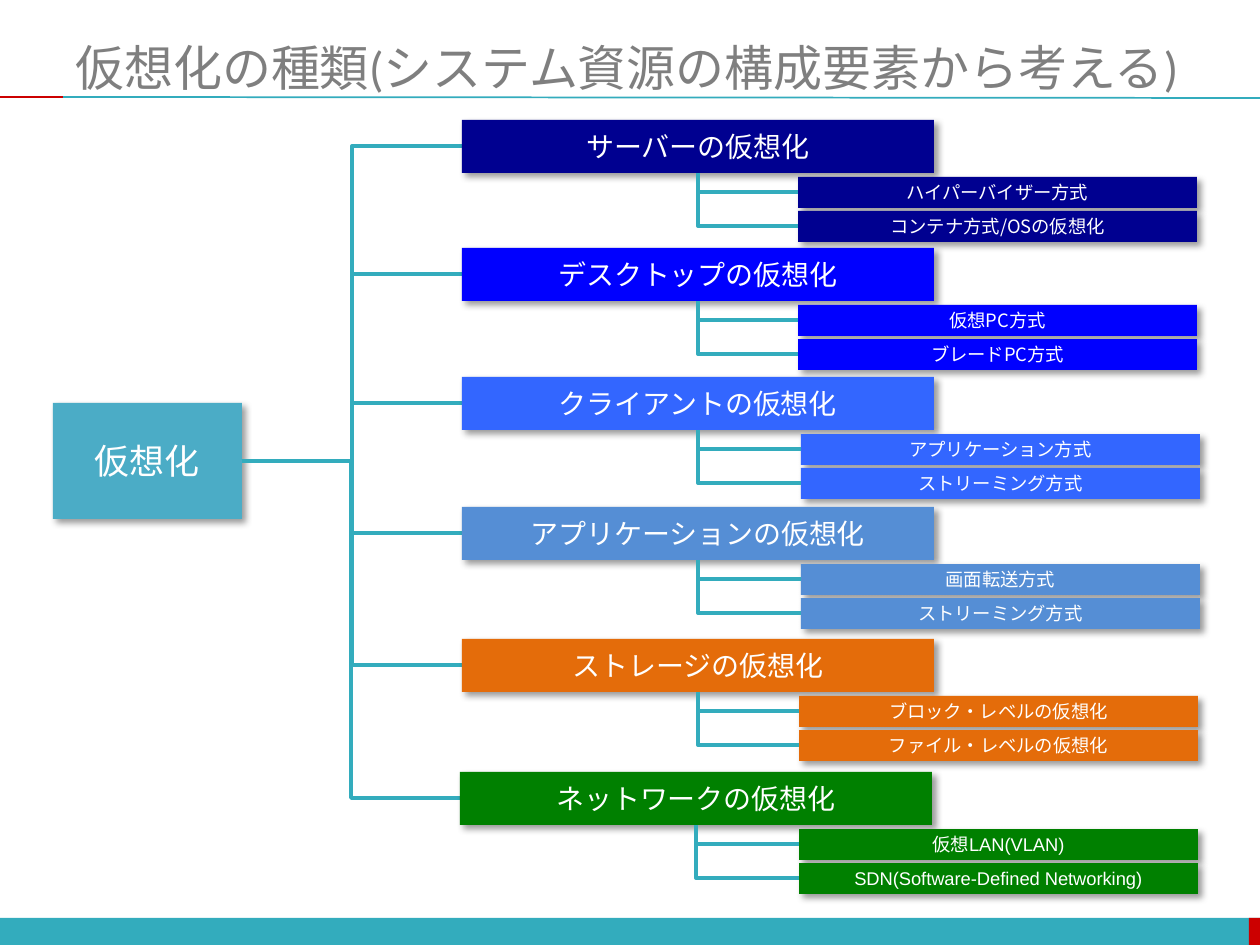
from typing import NamedTuple

from lxml import etree
from pptx import Presentation
from pptx import util as u
from pptx.dml.color import RGBColor
from pptx.enum import shapes, text
from pptx.oxml import parse_xml
from pptx.oxml.ns import nsdecls, qn

SCALE = 914400 / 126
JP = "Noto Sans CJK JP"
COLORS = {
    "teal": "33ACBD", "red": "CC0000", "grey": "7F7F7F", "white": "FFFFFF",
    "root": "4BACC6", "server": "000090", "desktop": "0000FF",
    "client": "3366FF", "app": "558ED5", "storage": "E46C0A",
    "network": "008000",
}
SHADOW = (
    f'<a:effectLst {nsdecls("a")}>'
    '<a:outerShdw blurRad="50800" dist="38100" dir="2700000" algn="tl" rotWithShape="0">'
    '<a:srgbClr val="000000"><a:alpha val="40000"/></a:srgbClr>'
    '</a:outerShdw></a:effectLst>'
)


class Box(NamedTuple):
    x: int
    y: int
    w: int
    h: int

    @property
    def mid(self) -> int:
        return self.y + self.h // 2


class Group(NamedTuple):
    title: str
    color: str
    left: int
    top: int
    kid_x: int
    kids: tuple[str, str]
    font: str = JP


GROUPS = [
    Group("サーバーの仮想化", "server", 462, 120, 798,
          ("ハイパーバイザー方式", "コンテナ方式/OSの仮想化")),
    Group("デスクトップの仮想化", "desktop", 462, 248, 798,
          ("仮想PC方式", "ブレードPC方式")),
    Group("クライアントの仮想化", "client", 462, 377, 801,
          ("アプリケーション方式", "ストリーミング方式")),
    Group("アプリケーションの仮想化", "app", 462, 507, 801,
          ("画面転送方式", "ストリーミング方式")),
    Group("ストレージの仮想化", "storage", 462, 639, 799,
          ("ブロック・レベルの仮想化", "ファイル・レベルの仮想化")),
    Group("ネットワークの仮想化", "network", 460, 772, 799,
          ("仮想LAN(VLAN)", "SDN(Software-Defined Networking)"), "Arial"),
]


def px(n: float) -> u.Emu:
    return u.Emu(round(n * SCALE))


def rgb(name: str) -> RGBColor:
    return RGBColor.from_string(COLORS[name])


def write(shape, words: str, size: float, color: str, font: str, align) -> None:
    frame = shape.text_frame
    frame.text = words
    frame.word_wrap = True
    frame.vertical_anchor = text.MSO_ANCHOR.MIDDLE
    frame.margin_top = frame.margin_bottom = 0
    para = frame.paragraphs[0]
    para.alignment = align
    for run in para.runs:
        run.font.size = u.Pt(size)
        run.font.name = font
        run.font.color.rgb = rgb(color)
        east = etree.SubElement(run.font._element, qn("a:ea"))
        east.set("typeface", JP)


def block(slide, box: Box, color: str):
    shape = slide.shapes.add_shape(
        shapes.MSO_SHAPE.RECTANGLE, *(px(n) for n in box))
    shape.shadow.inherit = False
    shape.fill.solid()
    shape.fill.fore_color.rgb = rgb(color)
    shape.line.fill.background()
    return shape


def node(slide, box: Box, words: str, color: str, size: float, font: str = JP) -> None:
    """Draw a labelled block with a soft shadow."""
    shape = block(slide, box, color)
    props = shape._element.spPr
    props.replace(props.find(qn("a:effectLst")), parse_xml(SHADOW))
    write(shape, words, size, "white", font, text.PP_ALIGN.CENTER)


def link(slide, kind, ends: tuple, color: str = "teal", width: float = 2):
    line = slide.shapes.add_connector(kind, *(px(n) for n in ends))
    line.line.color.rgb = rgb(color)
    line.line.width = u.Pt(width)
    etree.SubElement(line._element.spPr, qn("a:effectLst"))
    return line


def drop(slide, x1: int, y1: int, x2: int, y2: int) -> None:
    """Draw a one-bend link that goes down, then right."""
    midx, midy = (x1 + x2) / 2, (y1 + y2) / 2
    dx, dy = (x2 - x1) / 2, (y2 - y1) / 2
    ends = (midx + dy, midy - dx, midx - dy, midy + dx)
    line = link(slide, shapes.MSO_CONNECTOR.ELBOW, ends)
    props = line._element.spPr
    props.find(qn("a:prstGeom")).set("prst", "bentConnector2")
    props.find(qn("a:xfrm")).set("rot", str(270 * 60000))


def branch(slide, root: Box, group: Group) -> None:
    """Draw a group, its two methods and all their links."""
    head = Box(group.left, group.top, 472, 53)
    link(slide, shapes.MSO_CONNECTOR.ELBOW,
         (root.x + root.w, root.mid, head.x, head.mid))
    node(slide, head, group.title, group.color, 16)
    for i, name in enumerate(group.kids):
        kid = Box(group.kid_x, head.y + 57 + 34 * i, 399, 31)
        node(slide, kid, name, group.color, 10.5, group.font)
        drop(slide, head.x + head.w // 2, head.y + head.h, kid.x, kid.mid)


def frame(slide) -> None:
    """Draw the title, its rule and the footer band."""
    block(slide, Box(0, 918, 1260, 27), "teal")
    block(slide, Box(1249, 918, 11, 27), "red")
    straight = shapes.MSO_CONNECTOR.STRAIGHT
    link(slide, straight, (63, 97, 1260, 98), "teal", 1)
    link(slide, straight, (0, 97, 63, 97), "red", 1)
    title = slide.shapes.add_textbox(px(63), px(38), px(1197), px(58))
    write(title, "仮想化の種類(システム資源の構成要素から考える)", 28,
          "grey", "Calibri", text.PP_ALIGN.LEFT)


def main() -> None:
    deck = Presentation()
    deck.slide_width, deck.slide_height = px(1260), px(945)
    slide = deck.slides.add_slide(deck.slide_layouts[6])
    frame(slide)
    root = Box(53, 403, 189, 116)
    node(slide, root, "仮想化", "root", 20)
    for group in GROUPS:
        branch(slide, root, group)
    deck.save("out.pptx")


if __name__ == "__main__":
    main()
